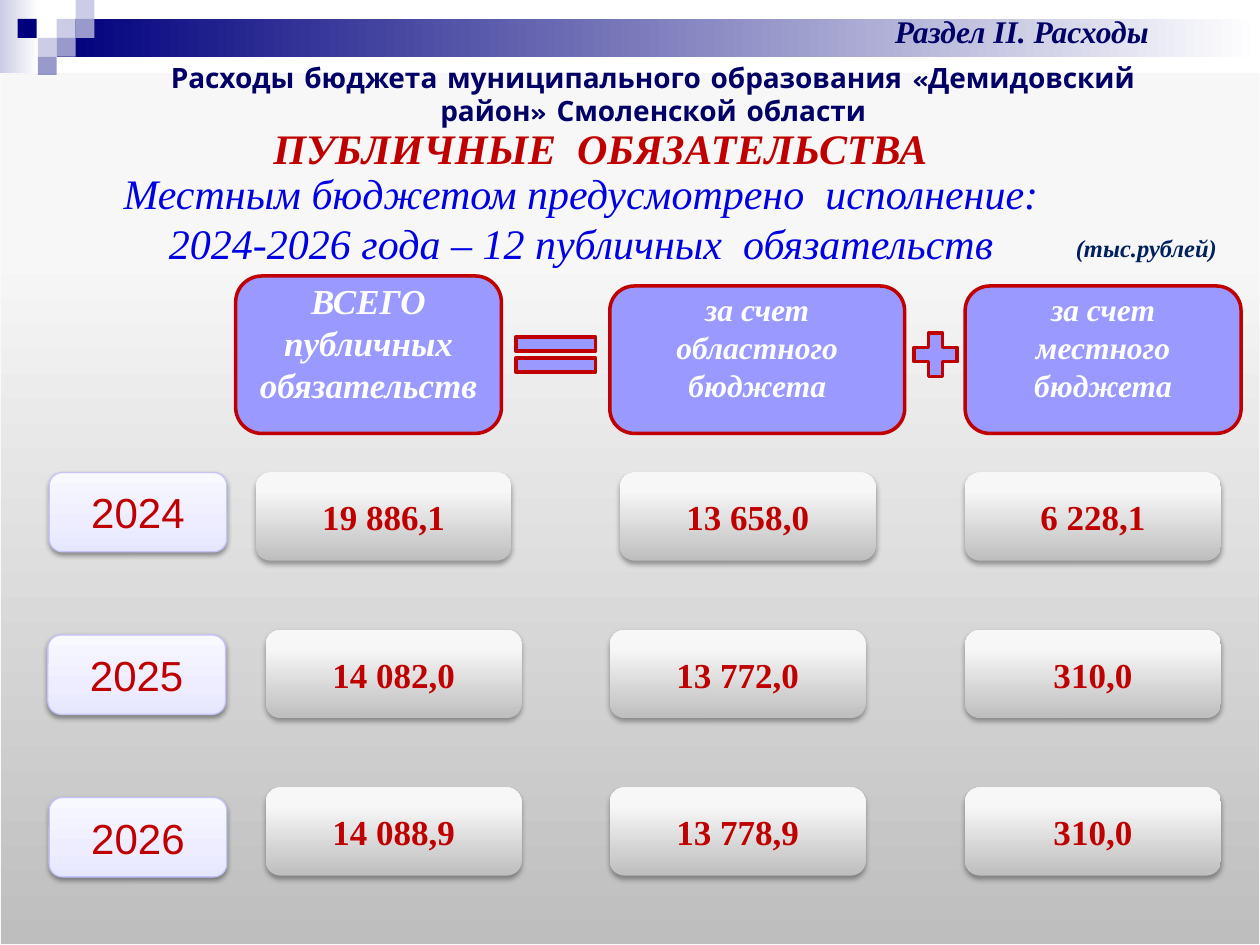
from lxml import etree
from pptx import Presentation
from pptx.dml.color import RGBColor
from pptx.enum.shapes import MSO_SHAPE
from pptx.enum.text import MSO_ANCHOR, PP_ALIGN
from pptx.oxml.ns import qn
from pptx.util import Inches, Pt

RECTANGLE = MSO_SHAPE.RECTANGLE
ROUNDED = MSO_SHAPE.ROUNDED_RECTANGLE
PROCESS = MSO_SHAPE.FLOWCHART_PROCESS
EQUAL = MSO_SHAPE.MATH_EQUAL
PLUS = MSO_SHAPE.MATH_PLUS
CENTER, LEFT = PP_ALIGN.CENTER, PP_ALIGN.LEFT
MIDDLE, TOP = MSO_ANCHOR.MIDDLE, MSO_ANCHOR.TOP

COLORS = {
    "white": "FFFFFF", "navy": "00007D", "title": "000066", "unit": "002060",
    "blue": "0000E4", "red": "C00000", "violet": "9999FF",
    "square_light": "CCCCE6", "square_mid": "9999CC",
    "panel_line": "F9F9F9", "year_line": "C4C4FB", "shadow": "000000",
}
GRAY_STOPS = [(0, "BEBEBE"), (80, "F7F7F7"), (100, "F8F8F8")]
YEAR_STOPS = [(0, "E6E6FF"), (35, "EDEDFF"), (100, "F8F8FF")]
UPWARD = 90
SERIF, SANS, HEADING = "Times New Roman", "Arial", "Comic Neue"


class SlideBuilder:
    """Holds the current slide and the style shared by its elements."""

    def __init__(self, slide):
        self.slide = slide

    def gradient(self, shape, stops, angle):
        shape.fill.gradient()
        shape.fill.gradient_angle = angle
        stop_list = shape.element.spPr.find(qn("a:gradFill")).find(qn("a:gsLst"))
        for stop in list(stop_list):
            stop_list.remove(stop)
        for position, color in stops:
            stop = etree.SubElement(stop_list, qn("a:gs"), pos=str(position * 1000))
            etree.SubElement(stop, qn("a:srgbClr"), val=color)

    def shadow(self, shape, opacity, distance):
        effects = shape.element.spPr.find(qn("a:effectLst"))
        outer = etree.SubElement(
            effects, qn("a:outerShdw"), blurRad=str(Pt(3.1)),
            dist=str(Pt(distance)), dir="5400000", rotWithShape="0")
        color = etree.SubElement(outer, qn("a:srgbClr"), val=COLORS["shadow"])
        etree.SubElement(color, qn("a:alpha"), val=str(opacity * 1000))

    def box(self, kind, place, fill=None, stops=None, angle=UPWARD,
            line=None, line_width=0.75, shadow=None):
        shape = self.slide.shapes.add_shape(kind, *map(Inches, place))
        shape.shadow.inherit = False
        if stops:
            self.gradient(shape, stops, angle)
        else:
            shape.fill.solid()
            shape.fill.fore_color.rgb = RGBColor.from_string(COLORS[fill])
        if line:
            shape.line.color.rgb = RGBColor.from_string(COLORS[line])
            shape.line.width = Pt(line_width)
        else:
            shape.line.fill.background()
        if shadow:
            self.shadow(shape, *shadow)
        return shape

    def set_text(self, shape, text, size, color, font=SERIF, bold=False,
                 italic=False, align=CENTER, anchor=MIDDLE):
        frame = shape.text_frame
        frame.text = text
        frame.word_wrap = True
        frame.vertical_anchor = anchor
        for paragraph in frame.paragraphs:
            paragraph.alignment = align
            for run in paragraph.runs:
                run.font.name = font
                run.font.size = Pt(size)
                run.font.bold = bold
                run.font.italic = italic
                run.font.color.rgb = RGBColor.from_string(COLORS[color])
        return frame

    def label(self, place, text, size, color, wrap=True, **style):
        text_box = self.slide.shapes.add_textbox(*map(Inches, place))
        frame = self.set_text(text_box, text, size, color, anchor=TOP, **style)
        frame.word_wrap = wrap

    def source_header(self, place, text, size):
        shape = self.box(ROUNDED, place, "violet", line="red", line_width=2)
        frame = self.set_text(shape, text, size, "white", bold=True, italic=True)
        frame.margin_top = Inches(0)
        frame.margin_bottom = Inches(0.2)

    def sign(self, kind, place):
        self.box(kind, place, "violet", line="red", line_width=2)

    def year(self, left, top, text):
        shape = self.box(ROUNDED, (left, top, 1.41, 0.63), stops=YEAR_STOPS,
                         line="year_line", shadow=(38, 1.6))
        self.set_text(shape, text, 24, "red", font=SANS)

    def amount(self, left, top, text):
        shape = self.box(ROUNDED, (left, top, 2.03, 0.7), stops=GRAY_STOPS,
                         shadow=(35, 1.8))
        self.set_text(shape, text, 20, "red", bold=True)


def main():
    presentation = Presentation()
    presentation.slide_width = Inches(10)
    presentation.slide_height = Inches(7.5)
    slide = presentation.slides.add_slide(presentation.slide_layouts[6])
    builder = SlideBuilder(slide)

    # Top band and its mosaic of squares
    for place, start in (((0, 0, 0.31, 0.58), "square_light"),
                         ((0.45, 0.15, 9.55, 0.3), "navy")):
        builder.box(RECTANGLE, place, angle=0,
                    stops=[(0, COLORS[start]), (100, COLORS["white"])])
    squares = [
        (0.45, 0.15, "square_light"), (0.6, 0, "square_light"),
        (0.6, 0.15, "square_mid"), (0.3, 0.3, "square_light"),
        (0.14, 0.15, "navy"), (0.45, 0.3, "square_mid"),
        (0.3, 0.45, "square_mid"),
    ]
    for left, top, color in squares:
        builder.box(RECTANGLE, (left, top, 0.15, 0.15), color)

    # Gray panel
    builder.box(PROCESS, (0, 0.6, 10, 6.9), stops=GRAY_STOPS,
                line="panel_line", shadow=(35, 1.8))

    # Titles
    builder.label((0.86, 0.92, 7.81, 0.5), "ПУБЛИЧНЫЕ  ОБЯЗАТЕЛЬСТВА",
                  24, "red", bold=True, italic=True)
    builder.label((0.12, 1.28, 8.98, 0.91),
                  "Местным бюджетом предусмотрено  исполнение:\n"
                  "2024-2026 года – 12 публичных  обязательств",
                  24, "blue", italic=True)
    builder.label((8.44, 1.8, 1.33, 0.34), "(тыс.рублей)", 14, "unit",
                  wrap=False, bold=True, italic=True, align=LEFT)
    builder.label((6.26, 0.05, 3.7, 0.4), "Раздел II. Расходы",
                  18, "title", bold=True, italic=True)
    builder.label((0.94, 0.43, 8.49, 0.37),
                  "Расходы бюджета муниципального образования "
                  "«Демидовский район» Смоленской области",
                  16, "title", font=HEADING, bold=True)

    # Equation: total = regional + local
    builder.source_header((1.87, 2.19, 2.11, 1.25),
                          "ВСЕГО\nпубличных\nобязательств", 20)
    builder.sign(EQUAL, (3.98, 2.58, 0.86, 0.47))
    builder.source_header((4.84, 2.27, 2.34, 1.17),
                          "за счет областного бюджета", 18)
    builder.sign(PLUS, (7.19, 2.58, 0.47, 0.47))
    builder.source_header((7.66, 2.27, 2.19, 1.17),
                          "за счет местного\nбюджета", 18)

    # Yearly amounts
    first_columns, columns = (2.03, 4.92, 7.66), (2.11, 4.84, 7.66)
    rows = [
        ("2024", 0.39, first_columns, ("19 886,1", "13 658,0", "6 228,1")),
        ("2025", 0.38, columns, ("14 082,0", "13 772,0", "310,0")),
        ("2026", 0.39, columns, ("14 088,9", "13 778,9", "310,0")),
    ]
    for index, (year, year_left, lefts, amounts) in enumerate(rows):
        builder.year(year_left, 3.75 + 1.29 * index, year)
        for left, amount in zip(lefts, amounts):
            builder.amount(left, 3.75 + 1.25 * index, amount)

    presentation.save("out.pptx")


if __name__ == "__main__":
    main()
